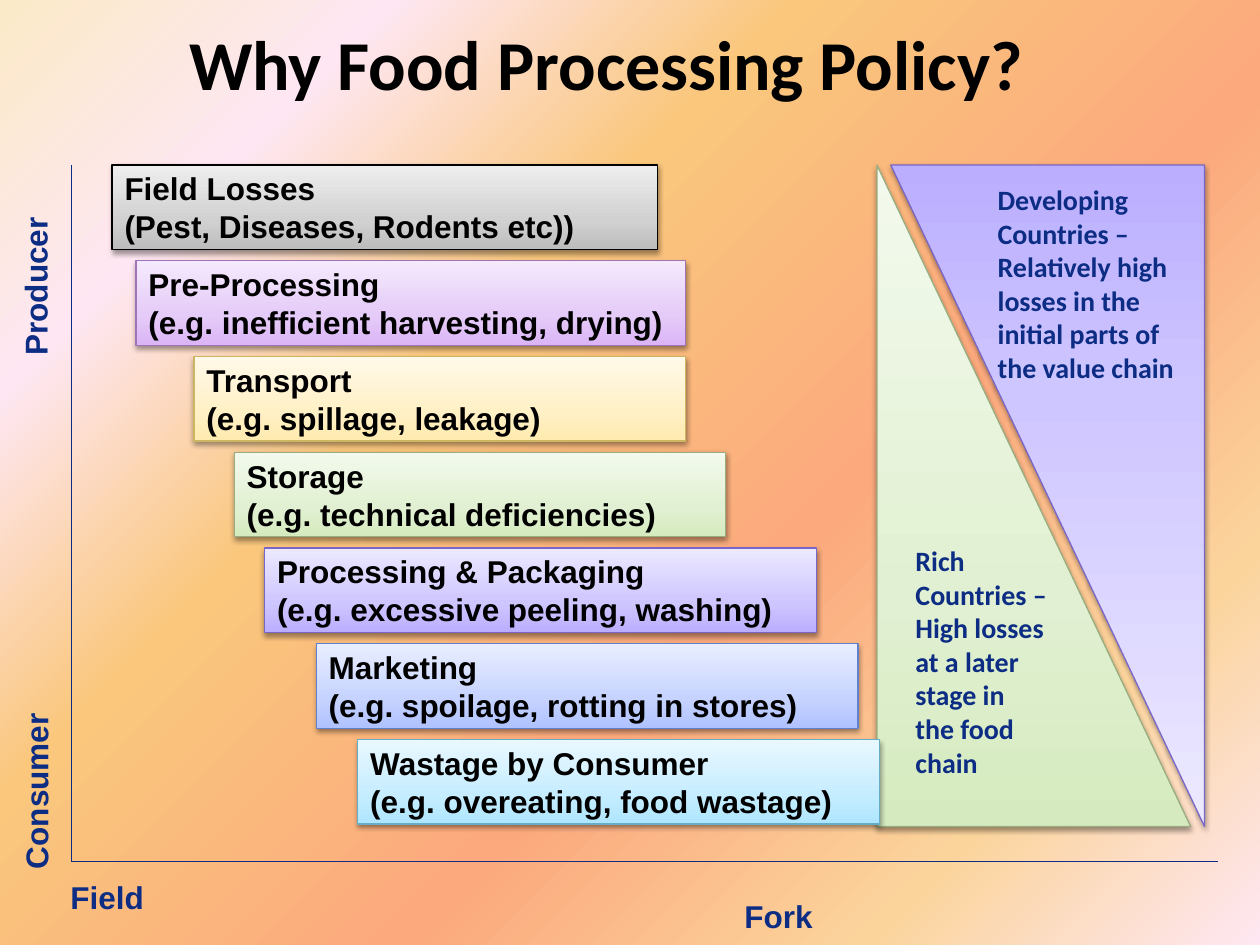
"""Build the slide on food losses along the chain from field to fork."""
from dataclasses import dataclass
from typing import Any

from lxml.etree import SubElement
from pptx import Presentation
from pptx.dml.color import RGBColor
from pptx.enum.shapes import MSO_CONNECTOR as Connector, MSO_SHAPE as Preset
from pptx.enum.text import MSO_ANCHOR as Anchor, PP_ALIGN as Align
from pptx.oxml import parse_xml
from pptx.oxml.ns import nsdecls, qn
from pptx.util import Inches, Pt

COLUMNS, ROWS = 10, 7.5
WIDTH, HEIGHT = Inches(10), Inches(7.5)
COLUMN, ROW = WIDTH / COLUMNS, HEIGHT / ROWS
CHART_TOP, STEP, BAR_HEIGHT = 1.31, 0.76, 0.67
AXIS_LEFT, AXIS_RIGHT, AXIS_BOTTOM = 0.57, 9.67, 6.84
WEDGE_WIDTH, WEDGE_HEIGHT = 2.49, 5.25

COLORS = {
    "ink": "000000", "navy": "0C2D83",
    "cream": "FBEAC7", "pink": "FEE7F2", "amber": "FAC77D",
    "salmon": "FBA97D", "sand": "FBD49C",
}
BACKDROP = {0: "cream", 18: "pink", 36: "amber", 61: "salmon", 82: "sand", 100: "pink"}
SHADES = {
    "grey": ("BDBDBD", "D1D1D1", "EEEEEE", "000000"),
    "lilac": ("DBB5F6", "E5CBF8", "F5EAFD", "A075B8"),
    "yellow": ("FFEBAF", "FFF0C6", "FFF9E9", "CCB661"),
    "green": ("D5EBBF", "E1F0D2", "F3FAED", "99AD80"),
    "violet": ("BBAEFF", "CEC6FF", "ECE9FF", "7A66C7"),
    "blue": ("B0C2FF", "C6D3FF", "E9EEFF", "6081CD"),
    "cyan": ("AEE6FF", "C6EDFF", "E9F8FF", "66AEC7"),
}
TITLE_FONT = {"name": "Calibri", "size": Pt(40), "bold": True}
STAGE_FONT = {"name": "Arial", "size": Pt(18), "bold": True}
COUNTRY_FONT = {"name": "Calibri", "size": Pt(16), "bold": True}


@dataclass(frozen=True)
class Box:
    left: float
    top: float
    width: float
    height: float

    def lengths(self) -> tuple[int, int, int, int]:
        return (round(self.left * COLUMN), round(self.top * ROW),
                round(self.width * COLUMN), round(self.height * ROW))


@dataclass(frozen=True)
class Stage:
    name: str
    example: str
    shade: str
    left: float
    width: float


@dataclass(frozen=True)
class Label:
    text: str
    box: Box
    font: dict[str, Any]
    rotation: int = 0


STAGES = [
    Stage("Field Losses", "(Pest, Diseases, Rodents etc))", "grey", 0.89, 4.33),
    Stage("Pre-Processing", "(e.g. inefficient harvesting, drying)", "lilac", 1.08, 4.36),
    Stage("Transport", "(e.g. spillage, leakage)", "yellow", 1.54, 3.9),
    Stage("Storage", "(e.g. technical deficiencies)", "green", 1.86, 3.9),
    Stage("Processing & Packaging", "(e.g. excessive peeling, washing)", "violet", 2.1, 4.38),
    Stage("Marketing", "(e.g. spoilage, rotting in stores)", "blue", 2.51, 4.3),
    Stage("Wastage by Consumer", "(e.g. overeating, food wastage)", "cyan", 2.84, 4.14),
]
LABELS = [
    Label("Consumer", Box(-0.67, 5.8, 1.95, 0.44), STAGE_FONT, 270),
    Label("Producer", Box(-0.6, 1.8, 1.8, 0.44), STAGE_FONT, 270),
    Label("Field", Box(0.46, 6.92, 1.52, 0.31), STAGE_FONT),
    Label("Fork", Box(5.81, 7.07, 1.37, 0.5), STAGE_FONT),
    Label("Developing Countries – Relatively high losses in the initial parts "
          "of the value chain", Box(7.82, 1.4, 1.63, 1.74), COUNTRY_FONT),
]


def set_gradient(parent: Any, stops: dict[int, str], angle: int) -> None:
    marks = "".join(f'<a:gs pos="{share * 1000}"><a:srgbClr val="{color}"/></a:gs>'
                    for share, color in stops.items())
    gradient = parse_xml(f'<a:gradFill {nsdecls("a")} rotWithShape="1"><a:gsLst>{marks}'
                         f'</a:gsLst><a:lin ang="{angle * 60000}" scaled="0"/></a:gradFill>')
    parent.replace(parent.find(qn("a:solidFill")), gradient)


def add_shadow(shape: Any) -> None:
    shape.shadow.inherit = False
    effects = shape.element.spPr.find(qn("a:effectLst"))
    effects.append(parse_xml(
        f'<a:outerShdw {nsdecls("a")} blurRad="{Pt(3.1)}" dist="{Pt(1.6)}" dir="5400000" '
        'rotWithShape="0"><a:srgbClr val="000000"><a:alpha val="38000"/></a:srgbClr>'
        '</a:outerShdw>'))


def write(frame: Any, lines: list[str], font: dict[str, Any], color: str,
          align: Align = Align.LEFT) -> None:
    frame.text = "\n".join(lines)
    for paragraph in frame.paragraphs:
        paragraph.alignment = align
        for run in paragraph.runs:
            for attribute, value in font.items():
                setattr(run.font, attribute, value)
            run.font.color.rgb = RGBColor.from_string(COLORS[color])


def add_panel(shapes: Any, preset: Preset, box: Box, shade: str) -> Any:
    dark, middle, light, edge = SHADES[shade]
    panel = shapes.add_shape(preset, *box.lengths())
    panel.fill.solid()
    set_gradient(panel.element.spPr, {0: dark, 35: middle, 100: light}, 270)
    panel.line.color.rgb = RGBColor.from_string(edge)
    panel.line.width = Pt(0.75)
    add_shadow(panel)
    panel.text_frame.vertical_anchor = Anchor.MIDDLE
    return panel


def add_axis(shapes: Any, end_column: float, end_row: float) -> None:
    axis = shapes.add_connector(
        Connector.STRAIGHT, round(AXIS_LEFT * COLUMN), round(AXIS_BOTTOM * ROW),
        round(end_column * COLUMN), round(end_row * ROW))
    axis.line.color.rgb = RGBColor.from_string(COLORS["navy"])
    axis.line.width = Pt(0.75)
    SubElement(axis.element.spPr, qn("a:effectLst"))


def add_stage(shapes: Any, order: int, stage: Stage) -> None:
    box = Box(stage.left, CHART_TOP + order * STEP, stage.width, BAR_HEIGHT)
    bar = add_panel(shapes, Preset.RECTANGLE, box, stage.shade)
    bar.text_frame.word_wrap = False
    write(bar.text_frame, [stage.name, stage.example], STAGE_FONT, "ink")


def add_label(shapes: Any, label: Label) -> None:
    caption = shapes.add_textbox(*label.box.lengths())
    caption.rotation = label.rotation
    caption.text_frame.word_wrap = True
    write(caption.text_frame, [label.text], label.font, "navy")


def main() -> None:
    deck = Presentation()
    deck.slide_width, deck.slide_height = WIDTH, HEIGHT
    slide = deck.slides.add_slide(deck.slide_layouts[5])
    slide.background.fill.solid()
    set_gradient(slide.element.find(".//" + qn("p:bgPr")),
                 {share: COLORS[name] for share, name in BACKDROP.items()}, 45)

    title = slide.shapes.title
    title.left, title.top, title.width, title.height = Box(0.31, 0.08, 9, 0.83).lengths()
    title.text_frame.vertical_anchor = Anchor.MIDDLE
    write(title.text_frame, ["Why Food Processing Policy?"], TITLE_FONT, "ink", Align.CENTER)

    chain = slide.shapes.add_group_shape().shapes
    add_axis(chain, AXIS_LEFT, CHART_TOP)
    add_axis(chain, AXIS_RIGHT, AXIS_BOTTOM)
    rich = add_panel(chain, Preset.RIGHT_TRIANGLE,
                     Box(6.96, CHART_TOP, WEDGE_WIDTH, WEDGE_HEIGHT), "green")
    rich.text_frame.word_wrap = True
    write(rich.text_frame, ["Rich Countries – High losses at a later stage in the food chain"],
          COUNTRY_FONT, "navy")
    developing = add_panel(chain, Preset.RIGHT_TRIANGLE,
                           Box(7.07, CHART_TOP, WEDGE_WIDTH, WEDGE_HEIGHT), "violet")
    developing.rotation = 180
    for order, stage in enumerate(STAGES):
        add_stage(chain, order, stage)
    for label in LABELS:
        add_label(chain, label)
    deck.save("out.pptx")


if __name__ == "__main__":
    main()
